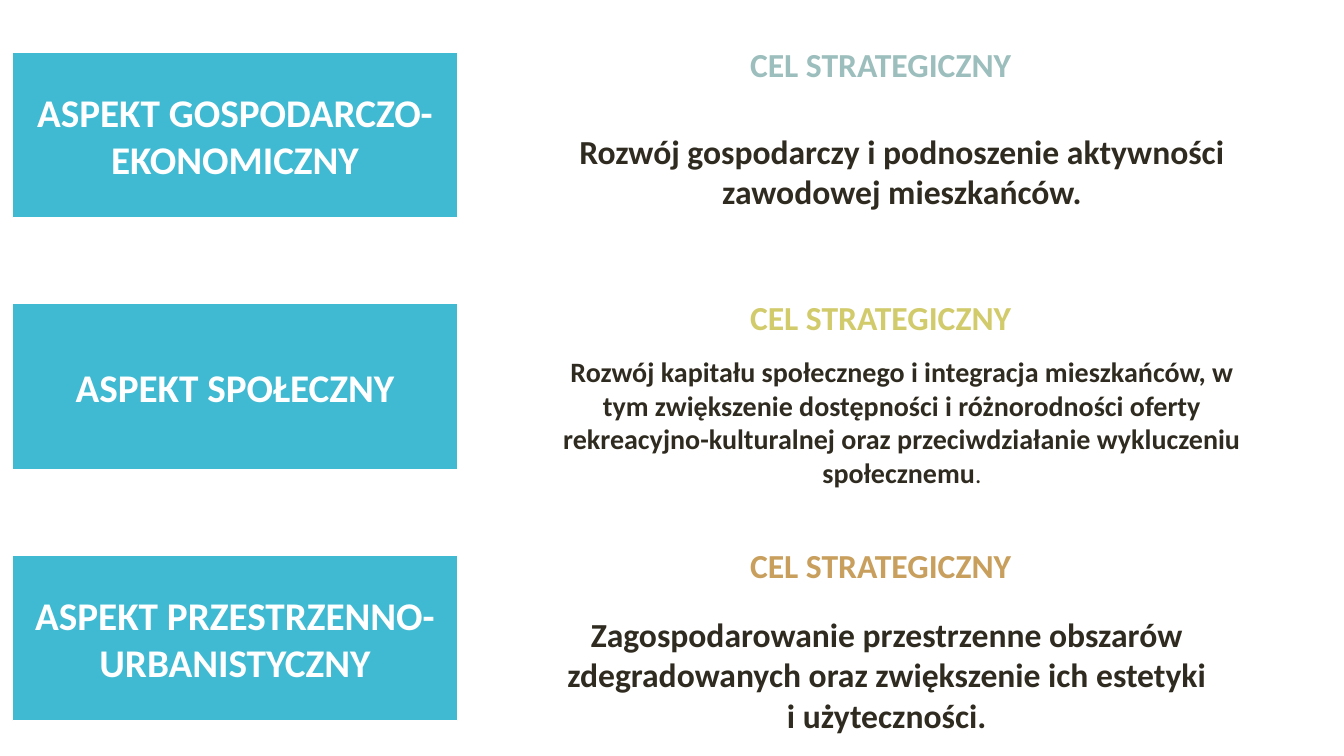
from pptx import Presentation
from pptx import util as u
from pptx.dml import color
from pptx.enum import shapes, text

COLOURS = {"panel": "40BAD2", "white": "FFFFFF", "ink": "2F2B20",
           "economy": "9CBEBD", "society": "D2CB6C", "space": "C89F5D"}
LEFT, TOP, PITCH = 0.12, 0.52, 2.495
PANEL_WIDTH, PANEL_HEIGHT = 4.42, 1.64
HEADING_LEFT, HEADING_WIDTH, HEADING_HEIGHT = 7.34, 3.19, 0.5


def rgb(name):
    return color.RGBColor.from_string(COLOURS[name])


def write(box, content, size=24, colour="ink", bold=True, centred=True, wrap=True):
    """Append a formatted run to the first paragraph of the box."""
    frame = box.text_frame
    frame.word_wrap = wrap
    para = frame.paragraphs[0]
    para.alignment = text.PP_ALIGN.CENTER if centred else text.PP_ALIGN.LEFT
    span = para.add_run()
    span.text = content
    span.font.name = "Calibri"
    span.font.size = u.Pt(size)
    span.font.bold = bold
    span.font.color.rgb = rgb(colour)


deck = Presentation()
deck.slide_width, deck.slide_height = u.Inches(13.33), u.Inches(7.5)
page = deck.slides.add_slide(deck.slide_layouts[6])

# aspect, heading colour, heading top, goal, goal size, goal box, closing mark
aspects = [
    ("ASPEKT GOSPODARCZO-EKONOMICZNY", "economy", 0.39,
     "Rozwój gospodarczy i podnoszenie aktywności zawodowej mieszkańców.",
     24, (5.46, 1.25, 6.97, 0.91), ""),
    ("ASPEKT SPOŁECZNY", "society", 2.9,
     "Rozwój kapitału społecznego i integracja mieszkańców, w tym zwiększenie "
     "dostępności i różnorodności oferty rekreacyjno-kulturalnej oraz "
     "przeciwdziałanie wykluczeniu społecznemu",
     20, (5.32, 3.47, 7.25, 1.45), "."),
    ("ASPEKT PRZESTRZENNO-URBANISTYCZNY", "space", 5.36,
     "Zagospodarowanie przestrzenne obszarów zdegradowanych oraz zwiększenie "
     "ich estetyki i użyteczności.",
     24, (5.46, 6.04, 6.67, 1.31), ""),
]

for row, (aspect, accent, heading_top, goal, size, area, mark) in enumerate(aspects):
    panel = page.shapes.add_shape(
        shapes.MSO_SHAPE.RECTANGLE, u.Inches(LEFT), u.Inches(TOP + row * PITCH),
        u.Inches(PANEL_WIDTH), u.Inches(PANEL_HEIGHT))
    panel.shadow.inherit = False
    panel.fill.solid()
    panel.fill.fore_color.rgb = rgb("panel")
    panel.line.color.rgb = rgb("white")
    panel.line.width = u.Pt(0.85)
    panel.text_frame.vertical_anchor = text.MSO_ANCHOR.MIDDLE
    write(panel, aspect, size=28, colour="white")

    heading = page.shapes.add_textbox(
        u.Inches(HEADING_LEFT), u.Inches(heading_top),
        u.Inches(HEADING_WIDTH), u.Inches(HEADING_HEIGHT))
    write(heading, "CEL STRATEGICZNY", colour=accent, centred=False, wrap=False)

    goal_box = page.shapes.add_textbox(*map(u.Inches, area))
    write(goal_box, goal, size=size)
    if mark:
        write(goal_box, mark, size=18, bold=False)
    for box in (heading, goal_box):
        box.text_frame.auto_size = text.MSO_AUTO_SIZE.SHAPE_TO_FIT_TEXT

deck.save("out.pptx")
